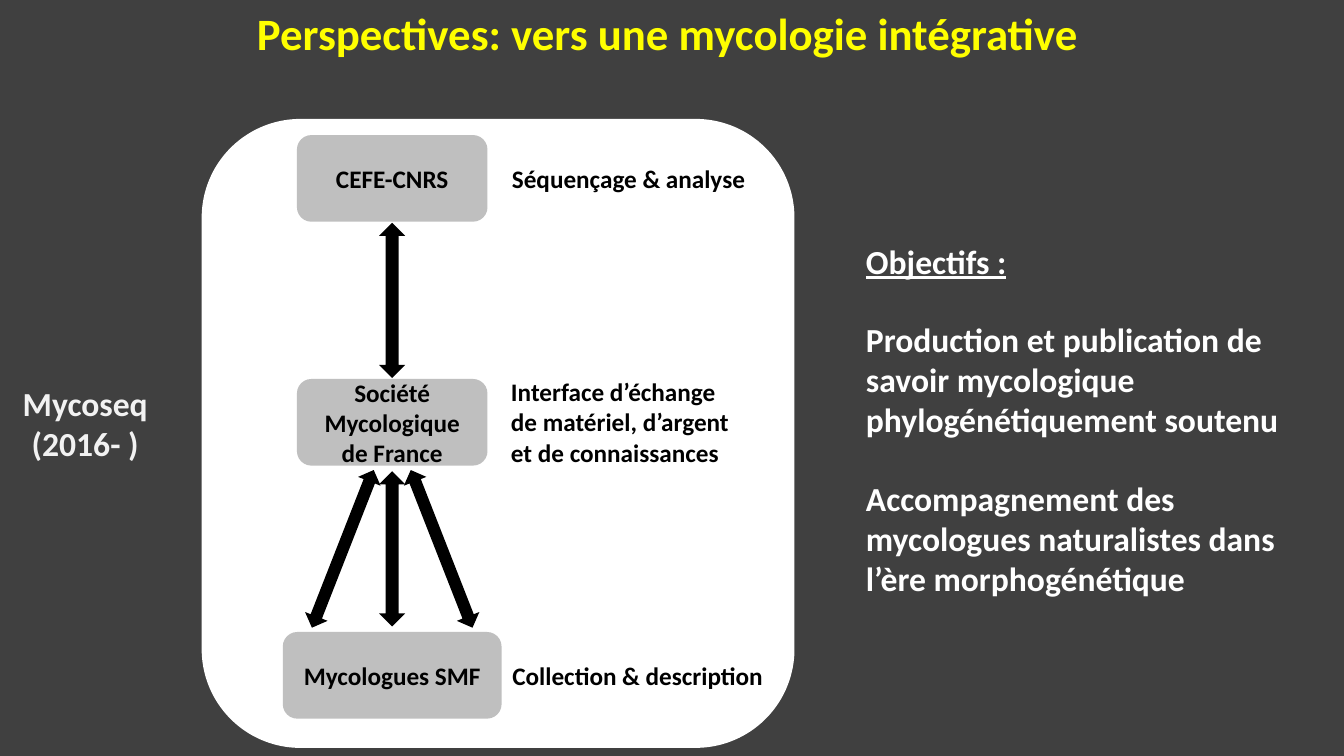
"""Build the Mycoseq slide on integrative mycology."""
from pptx import Presentation
from pptx.dml.color import RGBColor
from pptx.enum.shapes import MSO_SHAPE
from pptx.enum.text import MSO_ANCHOR, MSO_AUTO_SIZE, PP_ALIGN
from pptx.util import Inches, Pt

ROUNDED = MSO_SHAPE.ROUNDED_RECTANGLE
DOUBLE_ARROW = MSO_SHAPE.LEFT_RIGHT_ARROW
LEFT, CENTER = PP_ALIGN.LEFT, PP_ALIGN.CENTER
MIDDLE = MSO_ANCHOR.MIDDLE
FIT_SHAPE = MSO_AUTO_SIZE.SHAPE_TO_FIT_TEXT

CHARCOAL = RGBColor(0x40, 0x40, 0x40)
WHITE = RGBColor(0xFF, 0xFF, 0xFF)
PALE = RGBColor(0xF2, 0xF2, 0xF2)
GREY = RGBColor(0xBF, 0xBF, 0xBF)
BLACK = RGBColor(0, 0, 0)
YELLOW = RGBColor(0xFF, 0xFF, 0)

WIDTH, HEIGHT = 13.33, 7.5
FONT = "Calibri"
TITLE = "Perspectives: vers une mycologie intégrative"
PROJECT = "Mycoseq (2016- )"

ACTOR_X, ROLE_X, GOAL_X = 3.89, 4.97, 8.49
ACTOR_ROWS = (1.77, 4.19, 6.7)
ACTOR_HEIGHT = 0.86
ARROW_SPREAD = 0.49

# name, box width, role, role width, role height, alignment, wrap
ACTORS = (
    ("CEFE-CNRS", 1.89, "Séquençage & analyse", 2.53, 0.4, CENTER, False),
    ("Société Mycologique de France", 1.89,
     "Interface d’échange de matériel, d’argent et de connaissances", 2.43, 1.01, LEFT, True),
    ("Mycologues SMF", 2.17, "Collection & description", 2.71, 0.4, CENTER, False),
)
# horizontal offset, link row, length, thickness, rotation
ARROWS = (
    (ARROW_SPREAD, 1, 1.68, 0.24, 68.6),
    (0, 1, 1.54, 0.26, 270),
    (-ARROW_SPREAD, 1, 1.68, 0.24, 291.4),
    (0, 0, 1.54, 0.26, 270),
)
# text, top, width, height, underlined
GOALS = (
    ("Objectifs :", 2.34, 1.69, 0.5, True),
    ("Production et publication de savoir mycologique phylogénétiquement soutenu",
     3.11, 4.66, 1.31, False),
    ("Accompagnement des mycologues naturalistes dans l’ère morphogénétique",
     4.69, 4.4, 1.31, False),
)


def write(shape, text, size, color, alignment=LEFT, underline=None):
    paragraph = shape.text_frame.paragraphs[0]
    paragraph.text = text
    paragraph.alignment = alignment
    font = paragraph.font
    font.name, font.size, font.bold = FONT, Pt(size), True
    font.underline = underline
    font.color.rgb = color


def add_label(slide, text, box, size, color, alignment=LEFT, wrap=True, underline=None):
    shape = slide.shapes.add_textbox(*map(Inches, box))
    shape.text_frame.word_wrap = wrap
    shape.text_frame.auto_size = FIT_SHAPE
    write(shape, text, size, color, alignment, underline)


def add_centered(slide, kind, center_x, center_y, width, height, color):
    box = (center_x - width / 2, center_y - height / 2, width, height)
    shape = slide.shapes.add_shape(kind, *map(Inches, box))
    shape.shadow.inherit = False
    shape.fill.solid()
    shape.fill.fore_color.rgb = color
    shape.line.fill.background()
    return shape


def main():
    presentation = Presentation()
    presentation.slide_width, presentation.slide_height = Inches(WIDTH), Inches(HEIGHT)
    slide = presentation.slides.add_slide(presentation.slide_layouts[6])
    slide.background.fill.solid()
    slide.background.fill.fore_color.rgb = CHARCOAL

    add_centered(slide, ROUNDED, 4.94, 4.3, 5.88, 6.24, WHITE)
    add_label(slide, PROJECT, (0.09, 3.75, 1.51, 0.91), 24, PALE, CENTER)

    for row, (name, width, role, role_width, role_height, alignment, wrap) in zip(ACTOR_ROWS, ACTORS):
        actor = add_centered(slide, ROUNDED, ACTOR_X, row, width, ACTOR_HEIGHT, GREY)
        actor.text_frame.word_wrap = True
        actor.text_frame.vertical_anchor = MIDDLE
        write(actor, name, 18, BLACK, CENTER)
        role_box = (ROLE_X, row - role_height / 2, role_width, role_height)
        add_label(slide, role, role_box, 18, BLACK, alignment, wrap)

    for offset, link, length, thickness, rotation in ARROWS:
        center_y = (ACTOR_ROWS[link] + ACTOR_ROWS[link + 1]) / 2
        arrow = add_centered(slide, DOUBLE_ARROW, ACTOR_X + offset, center_y, length, thickness, BLACK)
        arrow.rotation = rotation

    for text, top, width, height, underlined in GOALS:
        add_label(slide, text, (GOAL_X, top, width, height), 24, WHITE, underline=underlined)

    add_label(slide, TITLE, (2.45, 0.01, 8.42, 0.64), 32, YELLOW, wrap=False)
    presentation.save("out.pptx")


if __name__ == "__main__":
    main()
